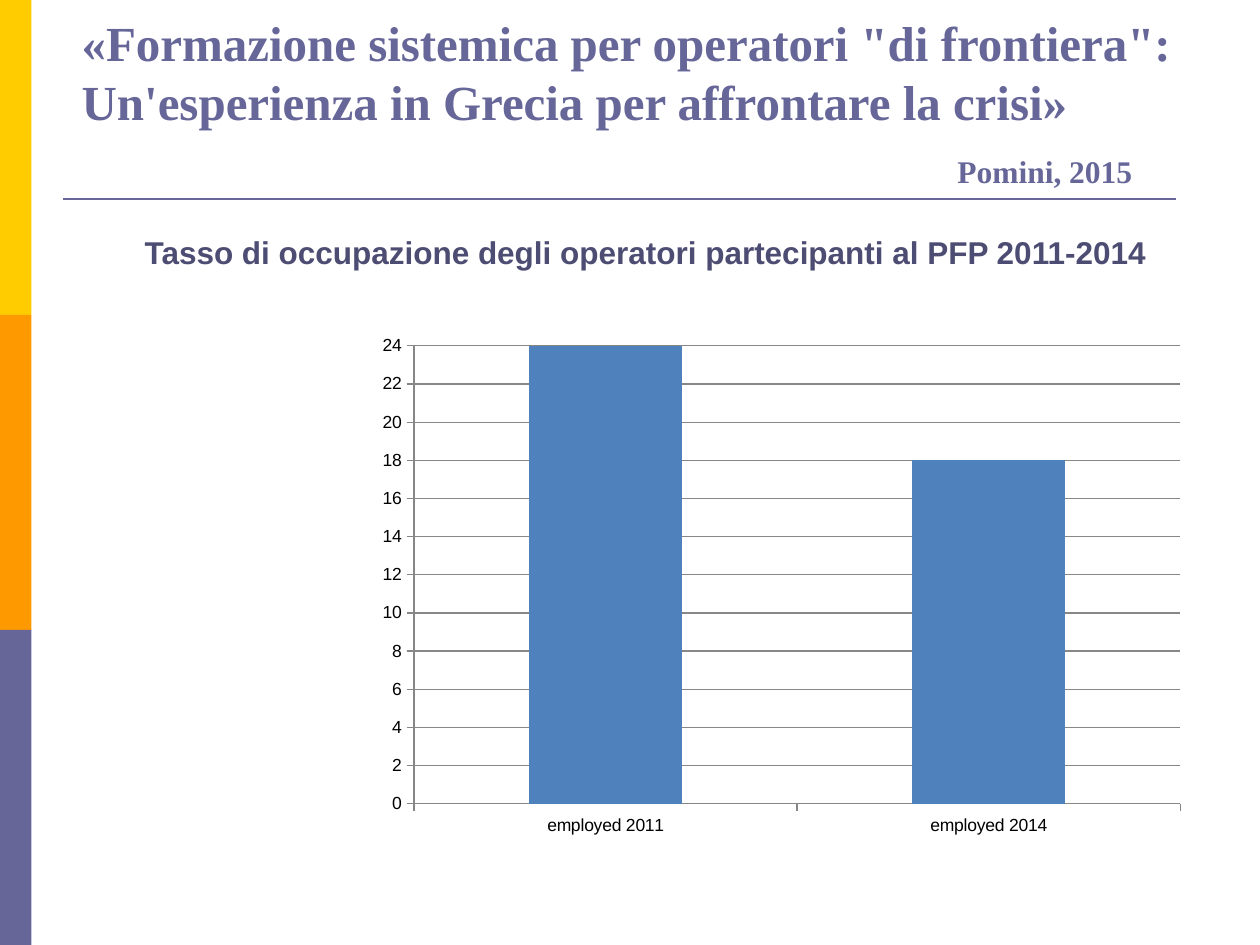
from dataclasses import dataclass

from lxml import etree
from pptx import Presentation
from pptx.chart.data import CategoryChartData
from pptx.dml.color import RGBColor
from pptx.enum.chart import XL_CHART_TYPE as ChartType, XL_TICK_MARK as Tick
from pptx.enum.shapes import MSO_CONNECTOR as Connector, MSO_SHAPE as Shape
from pptx.enum.text import MSO_ANCHOR as Anchor
from pptx.oxml import parse_xml
from pptx.oxml.ns import nsdecls, qn
from pptx.util import Inches, Pt


@dataclass(frozen=True)
class Theme:
    stripes: tuple = ("FFCC00", "FF9900", "666699")
    title: str = "666699"
    heading: str = "4D4D73"
    bar: str = "4F81BD"
    grid: str = "878787"
    text: str = "000000"
    paper: str = "FFFFFF"
    serif: str = "Times New Roman"
    sans: str = "Arial"
    title_size: int = 28
    title_pitch: int = 34
    sub_size: int = 18
    chart_size: int = 10


def rgb(value):
    return RGBColor.from_string(value)


class SlideBuilder:
    def __init__(self, slide, theme):
        self.s = slide
        self.theme = theme

    def rect(self, x, y, w, h, color):
        sp = self.s.shapes.add_shape(
            Shape.RECTANGLE, Inches(x), Inches(y), Inches(w), Inches(h))
        sp.shadow.inherit = False
        sp.fill.solid()
        sp.fill.fore_color.rgb = rgb(color)
        sp.line.fill.background()

    def rule(self, x1, x2, y, color, width):
        line = self.s.shapes.add_connector(
            Connector.STRAIGHT, Inches(x1), Inches(y), Inches(x2), Inches(y))
        line.line.color.rgb = rgb(color)
        line.line.width = Pt(width)
        etree.SubElement(line._element.spPr, qn("a:effectLst"))

    def text_box(self, x, y, w, h, anchor=Anchor.TOP, wrap=True):
        sp = self.s.shapes.add_textbox(
            Inches(x), Inches(y), Inches(w), Inches(h))
        tf = sp.text_frame
        tf.word_wrap = wrap
        tf.vertical_anchor = anchor
        return tf

    def run(self, p, text, size, font, color):
        r = p.add_run()
        r.text = text
        r.font.size = Pt(size)
        r.font.name = font
        r.font.bold = True
        r.font.color.rgb = rgb(color)

    def column_chart(self, x, y, w, h, cats, name, values, top, step):
        t = self.theme
        data = CategoryChartData()
        data.categories = cats
        data.add_series(name, values)
        chart = self.s.shapes.add_chart(
            ChartType.COLUMN_CLUSTERED, Inches(x), Inches(y),
            Inches(w), Inches(h), data).chart
        chart.has_legend = False
        chart.has_title = False
        chart.font.size = Pt(t.chart_size)
        chart.font.name = t.sans
        chart.font.color.rgb = rgb(t.text)

        # Columns
        plot = chart.plots[0]
        plot.gap_width = 150
        plot.vary_by_categories = False
        fill = plot.series[0].format.fill
        fill.solid()
        fill.fore_color.rgb = rgb(t.bar)

        # Axes and gridlines
        val = chart.value_axis
        val.minimum_scale, val.maximum_scale, val.major_unit = 0, top, step
        val.has_major_gridlines = True
        for axis in (chart.category_axis, val):
            axis.major_tick_mark = Tick.OUTSIDE
            axis.minor_tick_mark = Tick.NONE
        for part in (chart.category_axis, val, val.major_gridlines):
            part.format.line.color.rgb = rgb(t.grid)
            part.format.line.width = Pt(0.75)

        # Plot area position and fill
        area = chart._chartSpace.chart.plotArea
        for old in area.findall(qn("c:layout")):
            area.remove(old)
        spots = {"x": 0.06, "y": 0.04, "w": 0.92, "h": 0.88}
        marks = "".join(f'<c:{k} val="{v}"/>' for k, v in spots.items())
        area.insert(0, parse_xml(
            f'<c:layout {nsdecls("c")}><c:manualLayout>'
            '<c:layoutTarget val="inner"/><c:xMode val="edge"/>'
            f'<c:yMode val="edge"/>{marks}</c:manualLayout></c:layout>'))
        area.append(parse_xml(
            f'<c:spPr {nsdecls("c", "a")}><a:solidFill>'
            f'<a:srgbClr val="{t.paper}"/></a:solidFill></c:spPr>'))


def main():
    prs = Presentation()
    prs.slide_width, prs.slide_height = Inches(10), Inches(7.5)
    t = Theme()
    b = SlideBuilder(prs.slides.add_slide(prs.slide_layouts[6]), t)

    # Side stripes and title rule
    height = 7.5 / len(t.stripes)
    for i, color in enumerate(t.stripes):
        b.rect(0, i * height, 0.25, height, color)
    b.rule(0.5, 9.33, 1.58, t.title, 1.5)

    # Title with its author
    tf = b.text_box(0.55, 0, 9, 1.56, Anchor.BOTTOM)
    p = tf.paragraphs[0]
    p.line_spacing = Pt(t.title_pitch)
    b.run(p, "«Formazione sistemica per operatori \"di frontiera\": "
          "Un'esperienza in Grecia per affrontare la crisi»",
          t.title_size, t.serif, t.title)
    p = tf.add_paragraph()
    p.line_spacing = Pt(t.title_pitch)
    p._p.get_or_add_pPr().set("marL", str(Inches(6.95)))
    b.run(p, "Pomini, 2015", t.sub_size, t.serif, t.title)

    # Employment chart
    b.column_chart(2.89, 2.58, 6.61, 4.13,
                   ("employed 2011", "employed 2014"),
                   "Series 1", (24, 18), top=24, step=2)

    # Chart heading
    tf = b.text_box(1.05, 1.8, 8.16, 0.4, wrap=False)
    b.run(tf.paragraphs[0],
          "Tasso di occupazione degli operatori partecipanti al PFP 2011-2014",
          t.sub_size, t.sans, t.heading)

    prs.save("out.pptx")


if __name__ == "__main__":
    main()
